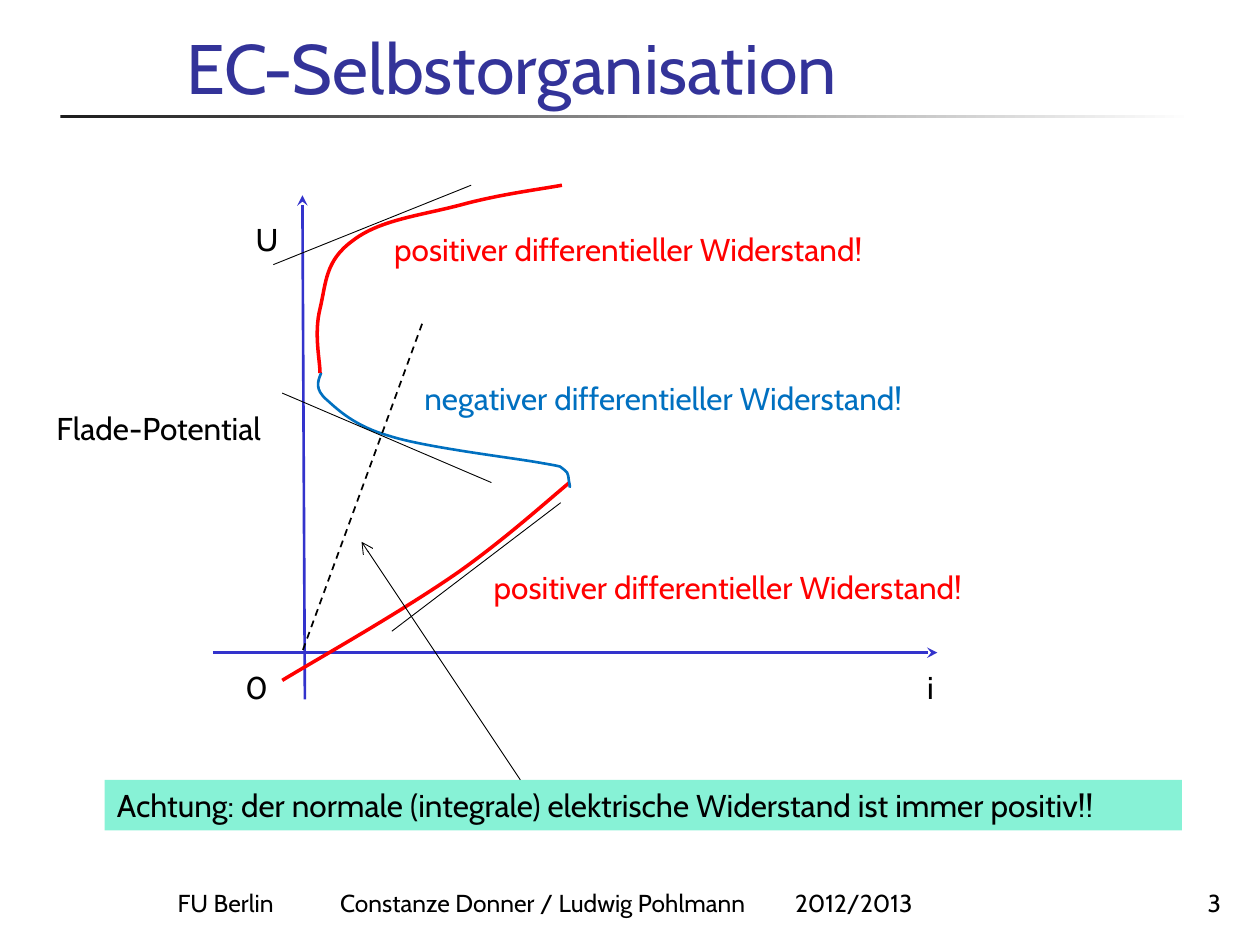
from lxml import etree
from pptx import Presentation
from pptx.dml.color import RGBColor
from pptx.enum.dml import MSO_LINE
from pptx.enum.shapes import MSO_CONNECTOR, MSO_SHAPE
from pptx.enum.text import MSO_ANCHOR, MSO_AUTO_SIZE, PP_ALIGN
from pptx.oxml.ns import qn
from pptx.util import Pt

PX = 9144
FONT = "Cabin"
TITLE_ONLY = 5
STRAIGHT = MSO_CONNECTOR.STRAIGHT
RECT = MSO_SHAPE.RECTANGLE
DASH = MSO_LINE.DASH
TOP, BOTTOM = MSO_ANCHOR.TOP, MSO_ANCHOR.BOTTOM
LEFT, RIGHT = PP_ALIGN.LEFT, PP_ALIGN.RIGHT
FIXED = MSO_AUTO_SIZE.NONE

BLACK = RGBColor(0x00, 0x00, 0x00)
WHITE = RGBColor(0xFF, 0xFF, 0xFF)
CHARCOAL = RGBColor(0x1C, 0x1C, 0x1C)
NAVY = RGBColor(0x33, 0x33, 0x99)
AXIS_BLUE = RGBColor(0x33, 0x33, 0xCC)
BLUE = RGBColor(0x00, 0x70, 0xC0)
RED = RGBColor(0xFF, 0x00, 0x00)
MINT = RGBColor(0x00, 0xE4, 0xA8)

LOWER_BRANCH = [(224, 540), (252, 523), (318, 486), (364, 454),
                (402, 427), (435, 397), (452, 383)]
MIDDLE_BRANCH = [(255, 296), (252, 303), (250, 309), (259, 317),
                 (268, 325), (281, 338), (309, 346),
                 (337, 355), (404, 363), (427, 367),
                 (450, 371), (444, 370), (448, 373),
                 (452, 375), (451, 381), (452, 384),
                 (453, 386), (452, 386), (452, 387)]
UPPER_BRANCH = [(254, 296), (254, 286), (249, 265), (254, 245),
                (259, 224), (258, 207), (280, 191),
                (302, 174), (335, 171), (368, 162),
                (398, 154), (430, 150), (446, 147)]


def emu(*lengths):
    return [n * PX for n in lengths]


def write(sp, text, size=18, color=BLACK, align=LEFT, anchor=TOP, wrap=False):
    tf = sp.text_frame
    tf.auto_size = FIXED
    tf.word_wrap = wrap
    tf.vertical_anchor = anchor
    p = tf.paragraphs[0]
    p.alignment = align
    r = p.add_run()
    r.text = text
    r.font.name = FONT
    r.font.size = Pt(size)
    r.font.color.rgb = color
    return p


class Deck:
    def __init__(self, width, height):
        self.prs = Presentation()
        self.prs.slide_width, self.prs.slide_height = emu(width, height)
        self.s = None

    def slide(self):
        self.s = self.prs.slides.add_slide(self.prs.slide_layouts[TITLE_ONLY])

    def title(self, text, *box):
        sp = self.s.shapes.title
        sp.left, sp.top, sp.width, sp.height = emu(*box)
        write(sp, text, size=40, color=NAVY, anchor=BOTTOM, wrap=True)

    def label(self, text, *box, **style):
        write(self.s.shapes.add_textbox(*emu(*box)), text, **style)

    def footer(self, parts, *box, inset, tabs):
        sp = self.s.shapes.add_textbox(*emu(*box))
        sp.text_frame.margin_left = inset * PX
        p = write(sp, "\t".join(parts), size=14, anchor=BOTTOM, wrap=True)
        stops = etree.SubElement(p._p.get_or_add_pPr(), qn("a:tabLst"))
        for pos in tabs:
            etree.SubElement(stops, qn("a:tab"), pos=str(pos * PX), algn="l")

    def bar(self, *box):
        sp = self.s.shapes.add_shape(RECT, *emu(*box))
        sp.shadow.inherit = False
        sp.line.fill.background()
        return sp

    def rule(self, *box):
        fill = self.bar(*box).fill
        fill.gradient()
        fill.gradient_angle = 0
        for stop, color in zip(fill.gradient_stops, (CHARCOAL, WHITE)):
            stop.color.rgb = color

    def banner(self, text, *box):
        sp = self.bar(*box)
        sp.fill.solid()
        sp.fill.fore_color.rgb = MINT
        rgb = sp._element.spPr.find(".//" + qn("a:srgbClr"))
        etree.SubElement(rgb, qn("a:alpha"), val="47000")
        write(sp, text, wrap=True)

    def line(self, *ends, color=BLACK, width=0.5, dash=None, arrow=None):
        cx = self.s.shapes.add_connector(STRAIGHT, *emu(*ends))
        cx.line.color.rgb = color
        cx.line.width = Pt(width)
        if dash:
            cx.line.dash_style = dash
        if arrow:
            etree.SubElement(cx.line._get_or_add_ln(), qn("a:tailEnd"), type=arrow)
        etree.SubElement(cx._element.spPr, qn("a:effectLst"))

    def curve(self, points, color, width):
        builder = self.s.shapes.build_freeform(*points[0], scale=PX)
        builder.add_line_segments(points[1:], close=False)
        sp = builder.convert_to_shape()
        sp.shadow.inherit = False
        sp.fill.background()
        sp.line.color.rgb = color
        sp.line.width = Pt(width)
        segments = list(sp._element.iter(qn("a:lnTo")))
        outline = segments[0].getparent()
        for i in range(0, len(segments), 3):
            bezier = etree.SubElement(outline, qn("a:cubicBezTo"))
            for segment in segments[i:i + 3]:
                bezier.append(segment[0])
                outline.remove(segment)


def main():
    deck = Deck(1000, 750)
    deck.slide()
    deck.rule(48, 91, 900, 3)
    deck.footer(["FU Berlin", "Constanze Donner / Ludwig Pohlmann", "2012/2013"],
                35, 683, 795, 50, inset=106, tabs=(129, 490))
    deck.label("3", 847, 683, 132, 50, size=14, align=RIGHT, anchor=BOTTOM, wrap=True)
    deck.title("EC-Selbstorganisation", 138, 23, 840, 68)

    for axis in ((242, 555, 240, 155), (169, 518, 744, 518)):
        deck.line(*axis, color=AXIS_BLUE, width=1.5, arrow="stealth")
    deck.label("i", 726, 525, 26, 40)
    deck.label("Flade-Potential", 35, 320, 184, 40)
    deck.label("U", 193, 170, 37, 40)
    deck.label("0", 185, 525, 34, 40)

    deck.curve(LOWER_BRANCH, RED, 2)
    deck.curve(UPPER_BRANCH, RED, 2)
    deck.curve(MIDDLE_BRANCH, BLUE, 1.5)
    for tangent in ((445, 399, 311, 501), (224, 312, 390, 383), (374, 147, 217, 210)):
        deck.line(*tangent)

    deck.label("negativer differentieller Widerstand!", 327, 296, 418, 40, color=BLUE)
    for left, top in ((382, 446), (303, 178)):
        deck.label("positiver differentieller Widerstand!", left, top, 411, 40, color=RED)

    deck.banner("Achtung: der normale (integrale) elektrische Widerstand ist immer positiv!!",
                83, 619, 855, 40)
    deck.line(335, 257, 240, 517, width=1, dash=DASH)
    deck.line(413, 619, 287, 430, arrow="arrow")
    deck.prs.save("out.pptx")


if __name__ == "__main__":
    main()
